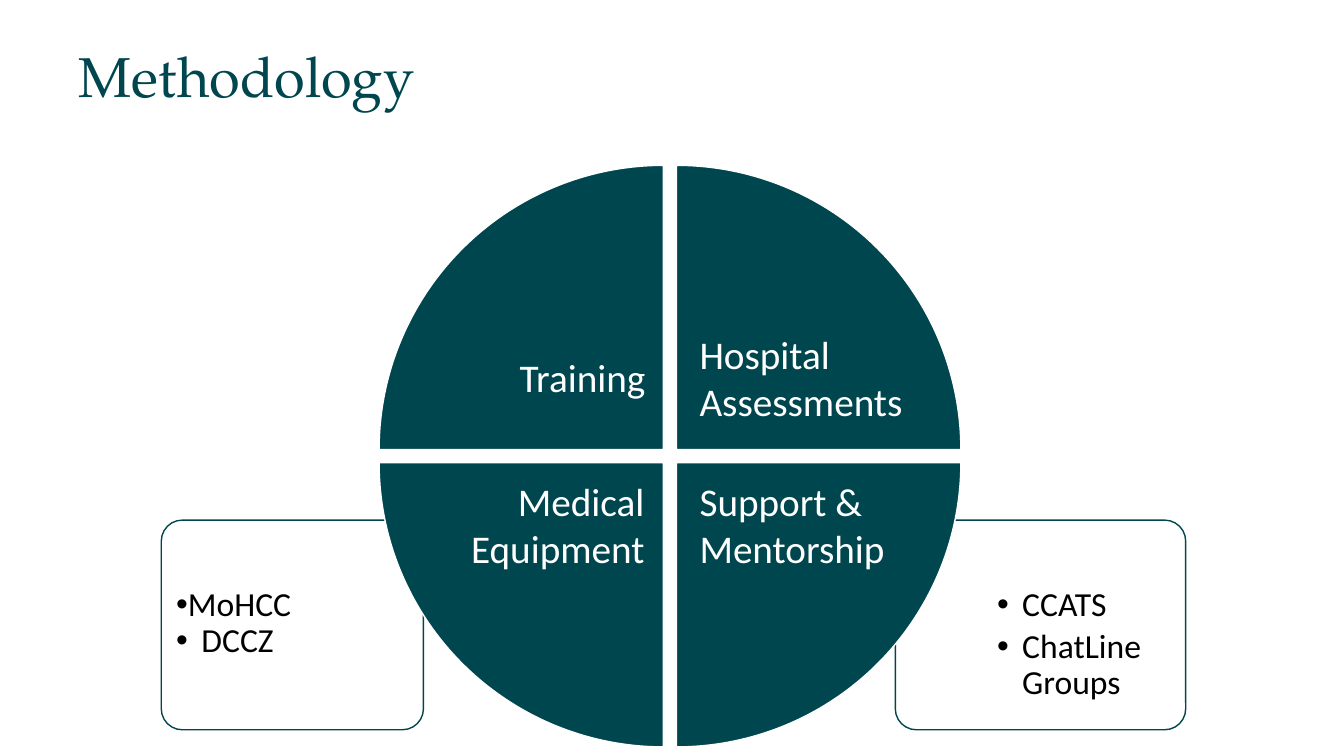
"""Build the Methodology slide: four wedges of a circle with two side panels."""
from dataclasses import dataclass

import pptx
import pptx.dml.color
import pptx.enum.shapes
import pptx.enum.text
import pptx.oxml
import pptx.oxml.ns
import pptx.util

PX = 9144
SHAPE = pptx.enum.shapes.MSO_SHAPE
ALIGN = pptx.enum.text.PP_ALIGN
ANCHOR = pptx.enum.text.MSO_ANCHOR


@dataclass(frozen=True)
class Theme:
    teal: str = "00464E"
    white: str = "FFFFFF"
    black: str = "000000"
    title_font: str = "TeX Gyre Pagella"
    body_font: str = "Calibri"
    title_size: int = 40
    label_size: int = 28
    item_size: int = 24


THEME = Theme()


def rgb(color):
    """Return a color object for a hex string."""
    return pptx.dml.color.RGBColor.from_string(color)


def box(*lengths):
    """Turn px lengths into EMU."""
    return [pptx.util.Emu(n * PX) for n in lengths]


def add_sub(parent, tag, **attrs):
    """Append a DrawingML element with attributes."""
    el = pptx.oxml.parse_xml(f"<{tag} {pptx.oxml.ns.nsdecls('a')}/>")
    for key, value in attrs.items():
        el.set(key, str(value))
    parent.append(el)


def add_text(s, text, at, font=THEME.body_font, size=THEME.label_size,
             color=THEME.white, align=ALIGN.LEFT, anchor=ANCHOR.TOP,
             spacing=1.0, after=0, inset=5, wrap=True, indents=()):
    """Add a text box, one paragraph per line, bulleted where indents are given."""
    tf = s.shapes.add_textbox(*box(*at)).text_frame
    tf.word_wrap = wrap
    tf.vertical_anchor = anchor
    tf.margin_top, tf.margin_bottom = box(inset, inset)
    for i, line in enumerate(text.split("\n")):
        p = tf.add_paragraph() if i else tf.paragraphs[0]
        p.alignment = align
        p.line_spacing = spacing
        p.space_after = pptx.util.Pt(after)
        if indents:
            pPr = p._p.get_or_add_pPr()
            pPr.set("marL", str(indents[i] * PX))
            pPr.set("indent", str(-25 * PX))
            add_sub(pPr, "a:buFont", typeface="Arial")
            add_sub(pPr, "a:buChar", char="•")
        r = p.add_run()
        r.text = line
        r.font.name = font
        r.font.size = pptx.util.Pt(size)
        r.font.color.rgb = rgb(color)


def add_shape(s, kind, at, fill, line):
    """Add a flat preset shape with a thin outline."""
    sp = s.shapes.add_shape(kind, *box(*at))
    sp.shadow.inherit = False
    sp.fill.solid()
    sp.fill.fore_color.rgb = rgb(fill)
    sp.line.color.rgb = rgb(line)
    sp.line.width = pptx.util.Pt(1)
    return sp


def add_panel(s, at, items, text_at, after, indents):
    """Add a translucent rounded panel with its bulleted items."""
    sp = add_shape(s, SHAPE.ROUNDED_RECTANGLE, at, THEME.white, THEME.teal)
    sp.adjustments[0] = 0.1
    color = sp._element.spPr.find(".//" + pptx.oxml.ns.qn("a:srgbClr"))
    add_sub(color, "a:alpha", val=90000)
    add_text(s, items, text_at, size=THEME.item_size, color=THEME.black,
             spacing=0.9, after=after, inset=10, indents=indents)


def add_wheel(s, left, top, side, step):
    """Add four wedges clockwise from the top left."""
    for i, (col, row) in enumerate([(0, 0), (1, 0), (1, 1), (0, 1)]):
        at = (left + col * step, top + row * step, side, side)
        sp = add_shape(s, SHAPE.PIE_WEDGE, at, THEME.teal, THEME.white)
        sp.rotation = 90 * i


def main():
    """Build and save the slide."""
    prs = pptx.Presentation()
    prs.slide_width, prs.slide_height = box(1333, 750)
    s = prs.slides.add_slide(prs.slide_layouts[6])
    add_text(s, "Methodology", (68, 40, 1173, 77), font=THEME.title_font,
             size=THEME.title_size, color=THEME.teal, anchor=ANCHOR.MIDDLE,
             spacing=0.9)
    add_panel(s, (160, 516, 260, 208), "MoHCC\nDCCZ",
              (165, 573, 173, 147), after=0, indents=(9, 25))
    add_panel(s, (888, 516, 288, 208), "CCATS\nChatLine Groups",
              (979, 573, 192, 147), after=4, indents=(25, 25))
    add_wheel(s, 376, 164, 282, 295)
    add_text(s, "Training", (504, 346, 146, 57), align=ALIGN.RIGHT, wrap=False)
    add_text(s, "Hospital Assessments", (684, 323, 287, 104))
    add_text(s, "Support & Mentorship", (684, 469, 287, 104))
    add_text(s, "Medical Equipment", (338, 469, 311, 104), align=ALIGN.RIGHT)
    prs.save("out.pptx")


if __name__ == "__main__":
    main()
